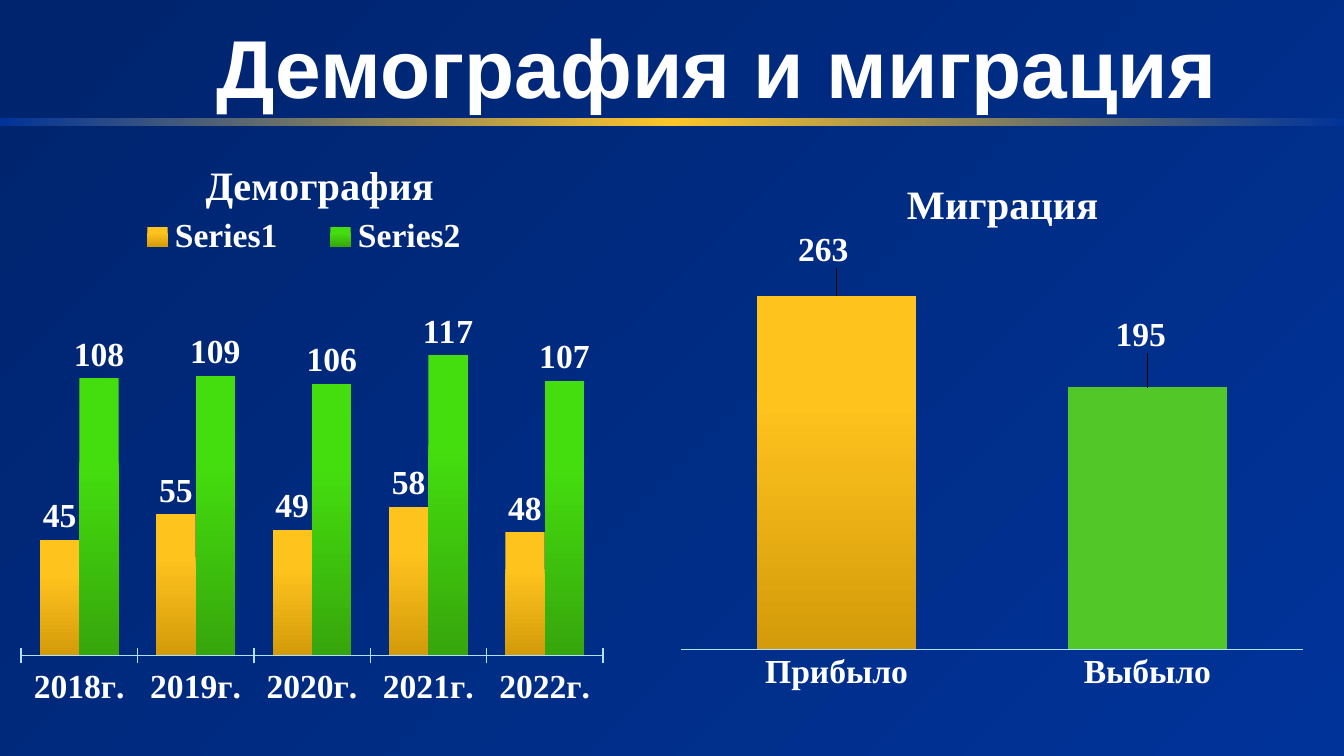
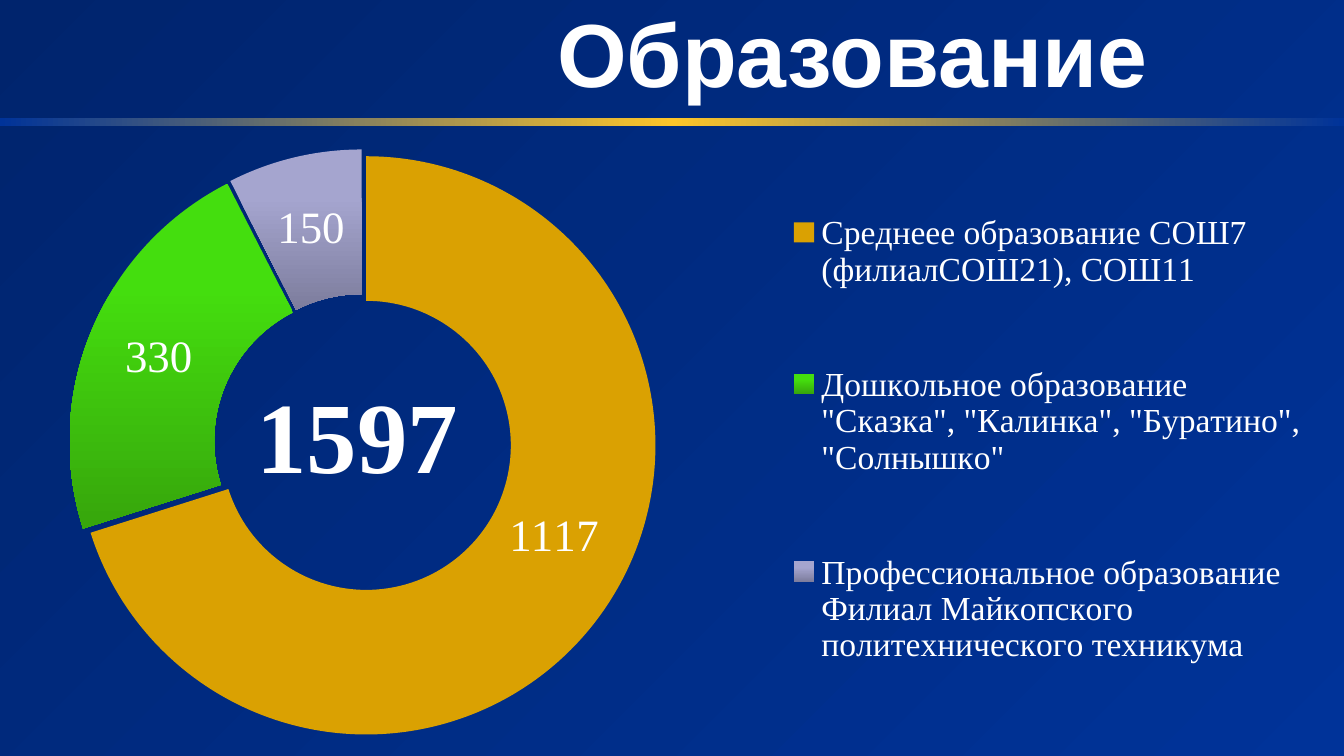
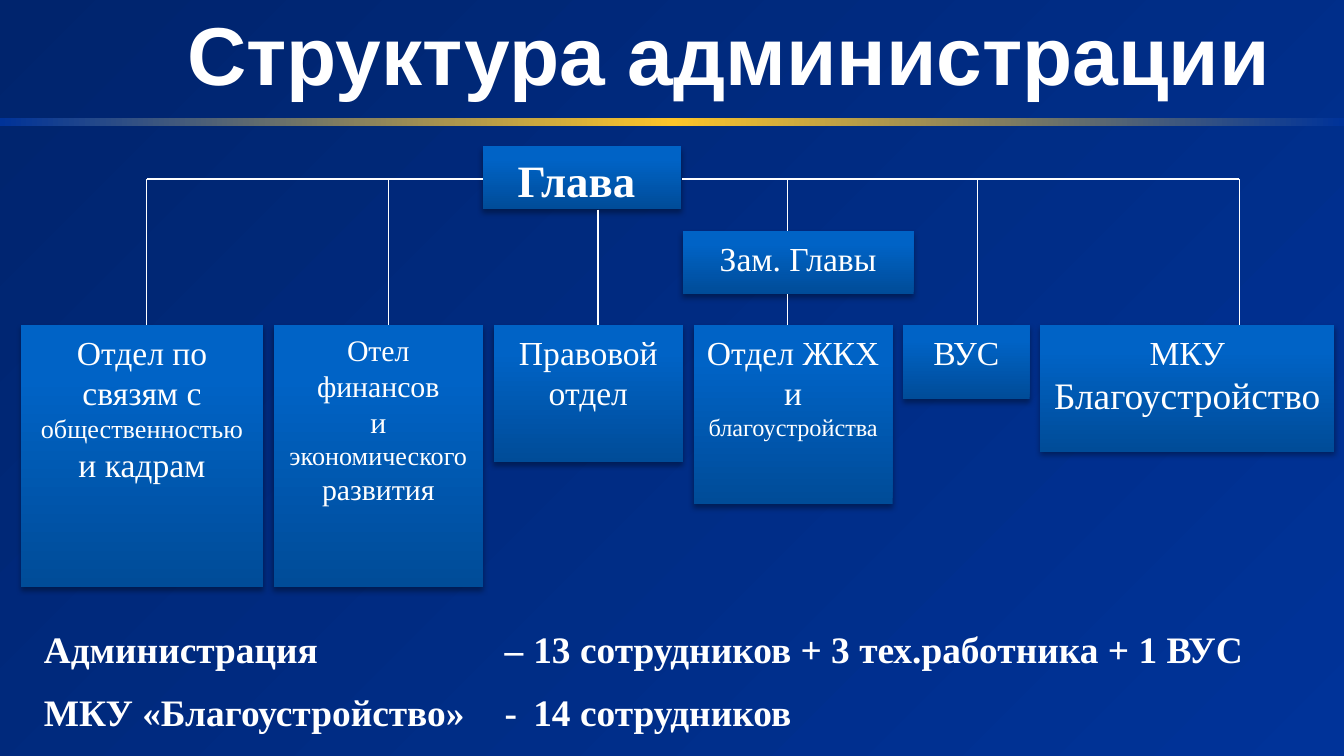
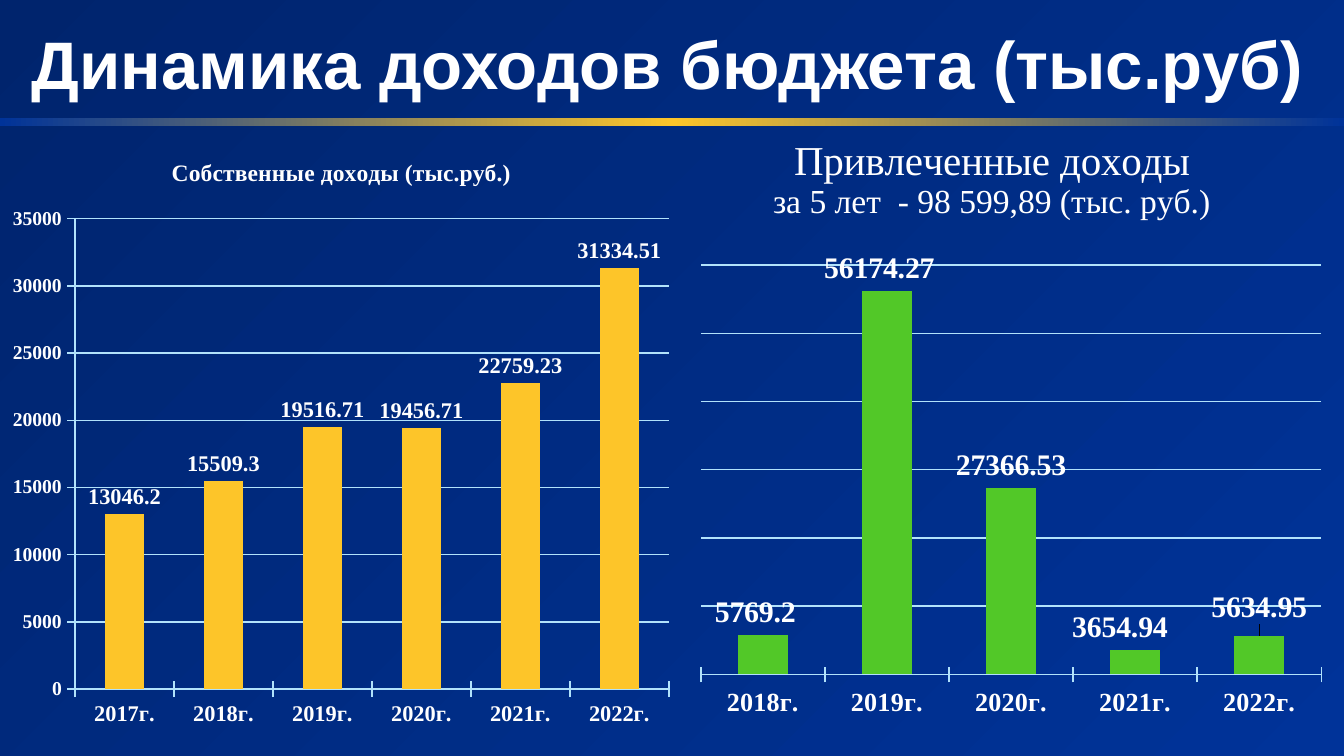
from copy import deepcopy
from dataclasses import dataclass, field
from typing import NamedTuple, Union

from lxml import etree
from pptx import Presentation
from pptx.chart.data import CategoryChartData
from pptx.dml.color import RGBColor
from pptx.enum.chart import XL_CHART_TYPE, XL_LABEL_POSITION, XL_LEGEND_POSITION, XL_TICK_LABEL_POSITION, XL_TICK_MARK
from pptx.enum.shapes import MSO_CONNECTOR, MSO_SHAPE
from pptx.enum.text import MSO_ANCHOR, PP_ALIGN
from pptx.oxml import parse_xml
from pptx.oxml.ns import nsdecls, qn
from pptx.util import Cm, Pt

NAVY = RGBColor(0x00, 0x24, 0x6D)
BLUE = RGBColor(0x00, 0x33, 0x99)
GOLD = RGBColor(0xFD, 0xC5, 0x29)
GOLD_TOP = RGBColor(0xFF, 0xC3, 0x1E)
GOLD_DARK = RGBColor(0xD4, 0x9B, 0x0A)
OCHRE = RGBColor(0xDA, 0xA1, 0x02)
GREEN = RGBColor(0x52, 0xC8, 0x28)
GREEN_TOP = RGBColor(0x44, 0xDE, 0x0E)
GREEN_DARK = RGBColor(0x37, 0xA6, 0x0C)
LILAC = RGBColor(0xA5, 0xA5, 0xCF)
LILAC_DARK = RGBColor(0x7D, 0x7D, 0x9D)
BOX_DARK = RGBColor(0x00, 0x4C, 0x98)
BOX_LIGHT = RGBColor(0x00, 0x63, 0xC6)
PALE = RGBColor(0xB1, 0xE2, 0xFB)
WHITE = RGBColor(0xFF, 0xFF, 0xFF)
SERIF = "Times New Roman"
SANS = "Arial"


class Box(NamedTuple):
    x: float
    y: float
    w: float
    h: float


class Gradient(NamedTuple):
    stops: tuple
    angle: int


class Run(NamedTuple):
    text: str
    size: float
    bold: bool = False
    font: str = SERIF


Fill = Union[RGBColor, Gradient]

BACKDROP = Gradient(((0, NAVY), (1, BLUE)), 45)
BAND = Gradient(((0, BLUE), (0.5, GOLD), (1, BLUE)), 0)
UNIT = Gradient(((0, BOX_DARK), (0.8, BOX_LIGHT), (1, BOX_LIGHT)), 270)
GOLD_FADE = Gradient(((0, GOLD_TOP), (0.3, GOLD_TOP), (1, GOLD_DARK)), 90)
GREEN_FADE = Gradient(((0, GREEN_TOP), (0.3, GREEN_TOP), (1, GREEN_DARK)), 90)
LILAC_FADE = Gradient(((0, LILAC), (0.3, LILAC), (1, LILAC_DARK)), 90)


@dataclass
class Label:
    dx: float = 0
    dy: float = 0
    text: str = ""


@dataclass
class Series:
    name: str
    values: tuple
    fill: Fill
    points: dict = field(default_factory=dict)
    labels: dict = field(default_factory=dict)


@dataclass
class ChartSpec:
    box: Box
    cats: tuple
    series: tuple
    plot: Box
    label_size: float
    kind: XL_CHART_TYPE = XL_CHART_TYPE.COLUMN_CLUSTERED
    label_pos: object = XL_LABEL_POSITION.OUTSIDE_END
    label_bold: bool = True
    title: tuple = ()
    title_at: tuple = ()
    legend: object = None
    legend_box: Box = None
    legend_bold: bool = True
    cat_size: float = 18
    tick: object = XL_TICK_MARK.CROSS
    top: float = 100
    step: float = 10
    gap: int = 150
    overlap: int = 0
    grid: bool = False
    scale_size: float = 0


def apply(obj, fmt: dict) -> None:
    for key, value in fmt.items():
        setattr(obj, key, value)


def style(font, size: float, bold: bool = False, name: str = SERIF) -> None:
    apply(font, {"name": name, "size": Pt(size), "bold": bold})
    font.color.rgb = WHITE


def paint(fill, look: Fill) -> None:
    if not isinstance(look, Gradient):
        fill.solid()
        fill.fore_color.rgb = look
        return
    fill.gradient()
    fill.gradient_angle = -look.angle % 360
    gs = fill.gradient_stops[0]._gs
    for _ in look.stops[2:]:
        gs.addnext(deepcopy(gs))
    for stop, (position, color) in zip(fill.gradient_stops, look.stops):
        stop.position = position
        stop.color.rgb = color


def emu(box: Box) -> list:
    return [Cm(v) for v in box]


def write(tf, paragraphs, align=PP_ALIGN.LEFT, anchor=MSO_ANCHOR.TOP, wrap=True) -> None:
    apply(tf, {"word_wrap": wrap, "vertical_anchor": anchor})
    for i, runs in enumerate(paragraphs):
        p = tf.paragraphs[0] if i == 0 else tf.add_paragraph()
        p.alignment = align
        for run in runs:
            r = p.add_run()
            r.text = run.text
            style(r.font, run.size, run.bold, run.font)


def add_text(s, box: Box, run: Run, **layout):
    tb = s.shapes.add_textbox(*emu(box))
    write(tb.text_frame, [[run]], **layout)
    return tb


def add_rect(s, box: Box, look: Fill):
    sp = s.shapes.add_shape(MSO_SHAPE.RECTANGLE, *emu(box))
    sp.shadow.inherit = False
    sp.line.fill.background()
    paint(sp.fill, look)
    return sp


def add_unit(s, box: Box, paragraphs) -> None:
    sp = add_rect(s, box, UNIT)
    effects = sp._element.spPr.find(qn("a:effectLst"))
    effects.append(parse_xml(
        f'<a:outerShdw {nsdecls("a")} blurRad="{Pt(3.1)}" dist="{Pt(1.8)}" dir="5400000" rotWithShape="0">'
        '<a:srgbClr val="000000"><a:alpha val="35000"/></a:srgbClr></a:outerShdw>'))
    write(sp.text_frame, paragraphs, align=PP_ALIGN.CENTER)


def add_line(s, x1: float, y1: float, x2: float, y2: float) -> None:
    cx = s.shapes.add_connector(MSO_CONNECTOR.STRAIGHT, Cm(x1), Cm(y1), Cm(x2), Cm(y2))
    cx.line.color.rgb = WHITE
    cx.line.width = Pt(0.75)
    etree.SubElement(cx._element.spPr, qn("a:effectLst"))


def new_slide(prs, title: str, box: Box, size: float, align=PP_ALIGN.RIGHT):
    s = prs.slides.add_slide(prs.slide_layouts[6])
    paint(s.background.fill, BACKDROP)
    add_rect(s, Box(0, 2.24, 25.4, 0.15), BAND)
    add_text(s, box, Run(title, size, True, SANS), align=align, anchor=MSO_ANCHOR.MIDDLE)
    return s


def place(parent, index: int, values, edge: bool = True, inner: bool = False) -> None:
    for old in parent.findall(qn("c:layout")):
        parent.remove(old)
    layout = etree.Element(qn("c:layout"))
    manual = etree.SubElement(layout, qn("c:manualLayout"))
    parts = [("layoutTarget", "inner")] if inner else []
    parts += [("xMode", "edge"), ("yMode", "edge")] if edge else []
    for tag, value in parts + list(zip("xywh", values)):
        etree.SubElement(manual, qn(f"c:{tag}")).set("val", str(value))
    parent.insert(index, layout)


def format_labels(ser, data: Series, spec: ChartSpec) -> None:
    labels = ser.data_labels
    labels.show_value = True
    style(labels.font, spec.label_size, spec.label_bold)
    if spec.label_pos is not None:
        labels.position = spec.label_pos
    for i, label in data.labels.items():
        dl = ser.points[i].data_label
        if label.text:
            write(dl.text_frame, [[Run(label.text, spec.label_size, spec.label_bold)]])
        else:
            style(dl.font, spec.label_size, spec.label_bold)
        if spec.label_pos is not None:
            dl.position = spec.label_pos
        dlbl = ser._element.xpath(f'c:dLbls/c:dLbl[c:idx/@val="{i}"]')[0]
        place(dlbl, 1, (label.dx, label.dy), edge=False)


def format_axes(chart, spec: ChartSpec) -> None:
    cat, val = chart.category_axis, chart.value_axis
    apply(cat, {"major_tick_mark": spec.tick, "has_major_gridlines": False})
    apply(val, {"minimum_scale": 0, "maximum_scale": spec.top, "major_unit": spec.step,
                "major_tick_mark": XL_TICK_MARK.CROSS, "has_major_gridlines": spec.grid,
                "visible": bool(spec.scale_size),
                "tick_label_position": XL_TICK_LABEL_POSITION.NEXT_TO_AXIS})
    style(cat.tick_labels.font, spec.cat_size, True)
    style(val.tick_labels.font, spec.scale_size or spec.cat_size, True)
    lines = [cat.format.line, val.format.line]
    if spec.grid:
        lines.append(val.major_gridlines.format.line)
    for line in lines:
        line.color.rgb = PALE
        line.width = Pt(0.75)


def add_chart(s, spec: ChartSpec) -> None:
    cd = CategoryChartData()
    cd.categories = spec.cats
    for data in spec.series:
        cd.add_series(data.name, data.values)
    chart = s.shapes.add_chart(spec.kind, *emu(spec.box), cd).chart
    style(chart.font, 18)
    chart.has_title = bool(spec.title)
    if spec.title:
        write(chart.chart_title.text_frame, [[run] for run in spec.title], align=PP_ALIGN.CENTER)
        if spec.title_at:
            place(chart.chart_title._element, 1, spec.title_at)
    chart.has_legend = spec.legend is not None
    if chart.has_legend:
        apply(chart.legend, {"position": spec.legend, "include_in_layout": False})
        style(chart.legend.font, 18, spec.legend_bold)
        place(chart.legend._element, 1, spec.legend_box)
    place(chart._chartSpace.chart.plotArea, 0, spec.plot, inner=True)
    plot = chart.plots[0]
    doughnut = spec.kind == XL_CHART_TYPE.DOUGHNUT
    plot.vary_by_categories = doughnut
    if not doughnut:
        apply(plot, {"gap_width": spec.gap, "overlap": spec.overlap})
        format_axes(chart, spec)
    for ser, data in zip(plot.series, spec.series):
        if doughnut:
            explosion = etree.Element(qn("c:explosion"))
            explosion.set("val", "3")
            ser._element.find(qn("c:tx")).addnext(explosion)
        else:
            ser.invert_if_negative = False
            paint(ser.format.fill, data.fill)
        for i, look in data.points.items():
            paint(ser.points[i].format.fill, look)
        format_labels(ser, data, spec)


def years(first: int, last: int) -> tuple:
    return tuple(f"{year}г." for year in range(first, last + 1))


def demography(prs) -> None:
    s = new_slide(prs, "Демография и миграция ", Box(2.74, 0.66, 20.96, 1.17), 44)
    add_chart(s, ChartSpec(
        Box(0, 2.39, 24.99, 11.91), years(2018, 2022),
        (Series("Series1", (45, 55, 49, 58, 48), GOLD_FADE),
         Series("Series2", (108, 109, 106, 117, 107), GREEN_FADE)),
        Box(0.016, 0.27, 0.44, 0.57), 18,
        title=(Run("Демография", 21.6, True),), title_at=(0.15, 0.04),
        legend=XL_LEGEND_POSITION.TOP, legend_box=Box(0.08, 0.12, 0.3, 0.11),
        top=140, step=20, gap=95))
    add_chart(s, ChartSpec(
        Box(12.5, 2.39, 12.5, 11.91), ("Прибыло", "Выбыло"),
        (Series("Миграция", (263, 195), GOLD_FADE, {1: GREEN},
                {0: Label(-0.02, -0.11), 1: Label(-0.01, -0.12)}),),
        Box(0.03, 0.19, 0.94, 0.64), 18,
        kind=XL_CHART_TYPE.COLUMN_STACKED, label_pos=XL_LABEL_POSITION.INSIDE_END,
        title=(Run("Миграция", 21.6, True),), title_at=(0.36, 0.07),
        tick=XL_TICK_MARK.NONE, top=300, step=50, gap=95, overlap=100))


def education(prs) -> None:
    s = new_slide(prs, "Образование ", Box(9.68, 0, 12.73, 1.96), 48)
    add_chart(s, ChartSpec(
        Box(0.51, 2.59, 24.41, 11.68),
        ("Среднеее образование СОШ7 (филиалСОШ21), СОШ11",
         'Дошкольное образование "Сказка", "Калинка", "Буратино", "Солнышко"',
         "Профессиональное образование Филиал Майкопского политехнического техникума"),
        (Series("Образование", (1065, 340, 114), OCHRE,
                {0: OCHRE, 1: GREEN_FADE, 2: LILAC_FADE},
                {0: Label(0.01, -0.06, "1117"), 1: Label(text="330"), 2: Label(text="150")}),),
        Box(0.03, 0.02, 0.46, 0.95), 24,
        kind=XL_CHART_TYPE.DOUGHNUT, label_pos=None, label_bold=False,
        legend=XL_LEGEND_POSITION.RIGHT, legend_box=Box(0.59, 0, 0.4, 0.98), legend_bold=False))
    add_text(s, Box(4.57, 6.93, 4.37, 4.88), Run("1597", 54, True), align=PP_ALIGN.CENTER, wrap=False)


def structure(prs) -> None:
    s = new_slide(prs, "Структура администрации ", Box(2.97, 0.41, 21.74, 1.17), 44)
    bus_y, row_y, gap = 3.38, 6.15, 0.2
    head = Box(9.12, 2.77, 3.76, 1.19)
    deputy = Box(12.9, 4.37, 4.37, 1.19)
    add_unit(s, head, [[Run("Глава ", 24, True)]])
    add_unit(s, deputy, [[Run("Зам. Главы", 18)]])
    departments = [
        (4.57, 4.95, [[Run("Отдел по связям с ", 18), Run("общественностью ", 14), Run("и кадрам", 18)]]),
        (3.96, 4.95, [[Run("Отел финансов", 16)], [Run("и", 16)],
                      [Run("экономического", 14)], [Run("развития", 16)]]),
        (3.58, 2.59, [[Run("Правовой отдел", 18)]]),
        (3.76, 3.38, [[Run("Отдел ЖКХ и ", 18), Run("благоустройства", 13)]]),
        (2.39, 1.4, [[Run("ВУС", 18)]]),
        (5.56, 2.39, [[Run("МКУ ", 18), Run("Благоустройство", 20)]]),
    ]
    x = 0.4
    for w, h, paragraphs in departments:
        add_unit(s, Box(x, row_y, w, h), paragraphs)
        x += w + gap
    left, right, deputy_x = 2.77, 23.42, 14.88
    add_line(s, head.x, bus_y, left, bus_y)
    add_line(s, right, bus_y, head.x + head.w, bus_y)
    for drop_x in (left, 7.34, 18.47, right):
        add_line(s, drop_x, bus_y, drop_x, row_y)
    add_line(s, 11.3, head.y + head.h, 11.3, row_y)
    add_line(s, deputy_x, bus_y, deputy_x, deputy.y)
    add_line(s, deputy_x, deputy.y + deputy.h, deputy_x, row_y)
    staff = [
        (Box(0.58, 11.71, 23.37, 1.12), "Администрация\t–\t13 сотрудников + 3 тех.работника + 1 ВУС"),
        (Box(0.58, 12.9, 14.88, 1.12), "МКУ «Благоустройство»\t-\t14 сотрудников"),
    ]
    for box, text in staff:
        tb = add_text(s, box, Run(text, 20, True))
        pPr = tb.text_frame.paragraphs[0]._p.get_or_add_pPr()
        tabs = etree.SubElement(pPr, qn("a:tabLst"))
        for position in (8.71, 9.25):
            tab = etree.SubElement(tabs, qn("a:tab"))
            tab.set("pos", str(Cm(position)))
            tab.set("algn", "l")


def revenue(prs) -> None:
    s = new_slide(prs, "Динамика доходов бюджета (тыс.руб)", Box(0.35, 0.41, 25.05, 1.55), 36, PP_ALIGN.LEFT)
    add_chart(s, ChartSpec(
        Box(11.1, 2.39, 14.3, 11.91), years(2018, 2022),
        (Series("Привлеченные доходы", (5769.2, 56174.27, 27366.53, 3654.94, 5634.95), GREEN,
                labels={0: Label(-0.01, 0), 1: Label(-0.01, 0), 3: Label(-0.02, 0), 4: Label(0, -0.01)}),),
        Box(0.15, 0.22, 0.82, 0.65), 16,
        title=(Run("Привлеченные доходы", 22), Run("за 5 лет  - 98 599,89 (тыс. руб.)", 18)),
        title_at=(0.24, 0.01), cat_size=14, top=60000, step=10000, grid=True))
    add_chart(s, ChartSpec(
        Box(0, 2.54, 12.9, 11.4), years(2017, 2022),
        (Series("Собственные доходы", (13046.2, 15509.3, 19516.71, 19456.71, 22759.23, 31334.51), GOLD),),
        Box(0.11, 0.14, 0.87, 0.78), 12,
        title=(Run("Собственные доходы (тыс.руб.)", 12.6, True),),
        cat_size=12, top=35000, step=5000, grid=True, scale_size=10.5))


def main() -> None:
    prs = Presentation()
    apply(prs, {"slide_width": Cm(25.4), "slide_height": Cm(14.29)})
    for build in (demography, education, structure, revenue):
        build(prs)
    prs.save("out.pptx")


if __name__ == "__main__":
    main()
